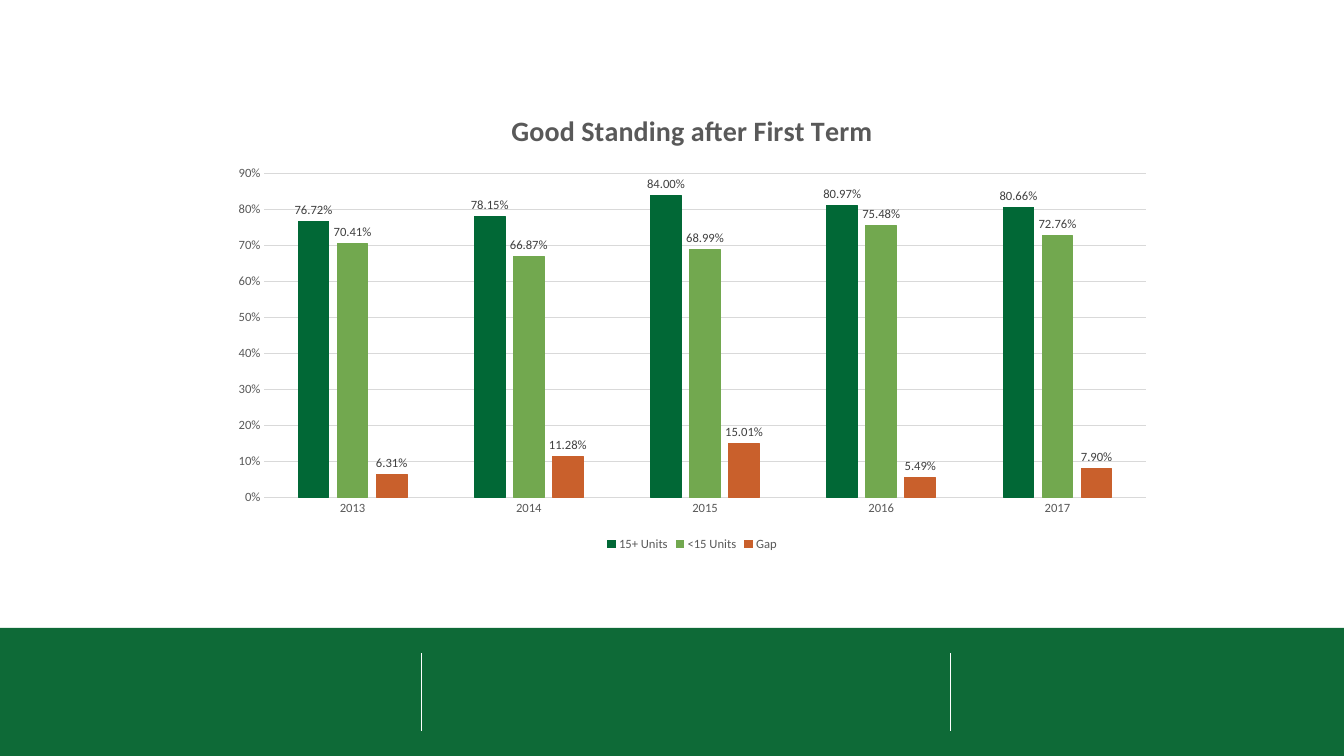
import pptx
import pptx.util
import pptx.chart.data
import pptx.dml.color
import pptx.enum.chart
import pptx.enum.shapes
import pptx.oxml
import pptx.oxml.ns

Inches = pptx.util.Inches
Pt = pptx.util.Pt

# Content
TITLE = "Good Standing after First Term"
YEARS = ["2013", "2014", "2015", "2016", "2017"]
SERIES = [
    ("15+ Units", "016836", [0.7672, 0.7815, 0.84, 0.8097, 0.8066]),
    ("<15 Units", "72A84F", [0.7041, 0.6687, 0.6899, 0.7548, 0.7276]),
    ("Gap", "C9602C", [0.0631, 0.1128, 0.1501, 0.0549, 0.079]),
]

THEME = {
    "font": "Calibri",
    "band": "0E6A37",
    "rule": "FFFFFF",
    "grid": "D9D9D9",
    "text": "595959",
    "label": "404040",
    "base": "000000",
    "title_size": 20,
    "base_size": 10,
    "small": 9,
    "line": 0.75,
}

# Layout
WIDE, HIGH = 13.33, 7.5
BAND_TOP = 6.23
RULES = [4.18, 9.43]
RULE_TOP, RULE_END = 6.48, 7.25
CHART = (2.18, 0.9, 9.37, 4.61)


def rgb(name):
    return pptx.dml.color.RGBColor.from_string(THEME.get(name, name))


def set_font(font, color="text", size="small", bold=False):
    font.name = THEME["font"]
    font.size = Pt(THEME[size])
    font.bold = bold
    font.color.rgb = rgb(color)


def set_line(line, color):
    line.color.rgb = rgb(color)
    line.width = Pt(THEME["line"])


def add_band(slide):
    band = slide.shapes.add_shape(
        pptx.enum.shapes.MSO_SHAPE.RECTANGLE,
        0, Inches(BAND_TOP), Inches(WIDE), Inches(HIGH - BAND_TOP))
    band.shadow.inherit = False
    band.fill.solid()
    band.fill.fore_color.rgb = rgb("band")
    band.line.fill.background()
    for left in RULES:
        rule = slide.shapes.add_connector(
            pptx.enum.shapes.MSO_CONNECTOR.STRAIGHT,
            Inches(left), Inches(RULE_TOP), Inches(left), Inches(RULE_END))
        set_line(rule.line, "rule")
        rule._element.spPr.append(pptx.oxml.parse_xml(
            "<a:effectLst %s/>" % pptx.oxml.ns.nsdecls("a")))


def add_bars(slide):
    kinds = pptx.enum.chart
    data = pptx.chart.data.CategoryChartData(number_format="0.00%")
    data.categories = YEARS
    for name, color, values in SERIES:
        data.add_series(name, values)
    chart = slide.shapes.add_chart(
        kinds.XL_CHART_TYPE.COLUMN_CLUSTERED,
        *[Inches(n) for n in CHART], data).chart
    set_font(chart.font, "base", "base_size")

    # Title and legend
    chart.has_title = True
    frame = chart.chart_title.text_frame
    frame.text = TITLE
    set_font(frame.paragraphs[0].runs[0].font, size="title_size", bold=True)
    chart.chart_title.include_in_layout = False
    chart.has_legend = True
    chart.legend.position = kinds.XL_LEGEND_POSITION.BOTTOM
    chart.legend.include_in_layout = False
    set_font(chart.legend.font)

    # Axes
    for axis in (chart.category_axis, chart.value_axis):
        axis.major_tick_mark = kinds.XL_TICK_MARK.NONE
        axis.minor_tick_mark = kinds.XL_TICK_MARK.NONE
        set_font(axis.tick_labels.font)
    set_line(chart.category_axis.format.line, "grid")
    scale = chart.value_axis
    scale.format.line.fill.background()
    set_line(scale.major_gridlines.format.line, "grid")
    scale.minimum_scale, scale.maximum_scale = 0, 0.9
    scale.major_unit = 0.1
    scale.tick_labels.number_format = "0%"
    scale.tick_labels.number_format_is_linked = False

    # Bars and labels
    plot = chart.plots[0]
    plot.gap_width = 219
    plot.overlap = -27
    plot.vary_by_categories = False
    for bars, (name, color, values) in zip(plot.series, SERIES):
        bars.invert_if_negative = False
        bars.format.fill.solid()
        bars.format.fill.fore_color.rgb = rgb(color)
        set_line(bars.format.line, color)
        labels = bars.data_labels
        labels.show_value = True
        labels.number_format = "0.00%"
        labels.number_format_is_linked = False
        labels.position = kinds.XL_LABEL_POSITION.OUTSIDE_END
        set_font(labels.font, "label")


def main():
    deck = pptx.Presentation()
    deck.slide_width = Inches(WIDE)
    deck.slide_height = Inches(HIGH)
    slide = deck.slides.add_slide(deck.slide_layouts[6])
    add_band(slide)
    add_bars(slide)
    deck.save("out.pptx")


if __name__ == "__main__":
    main()
